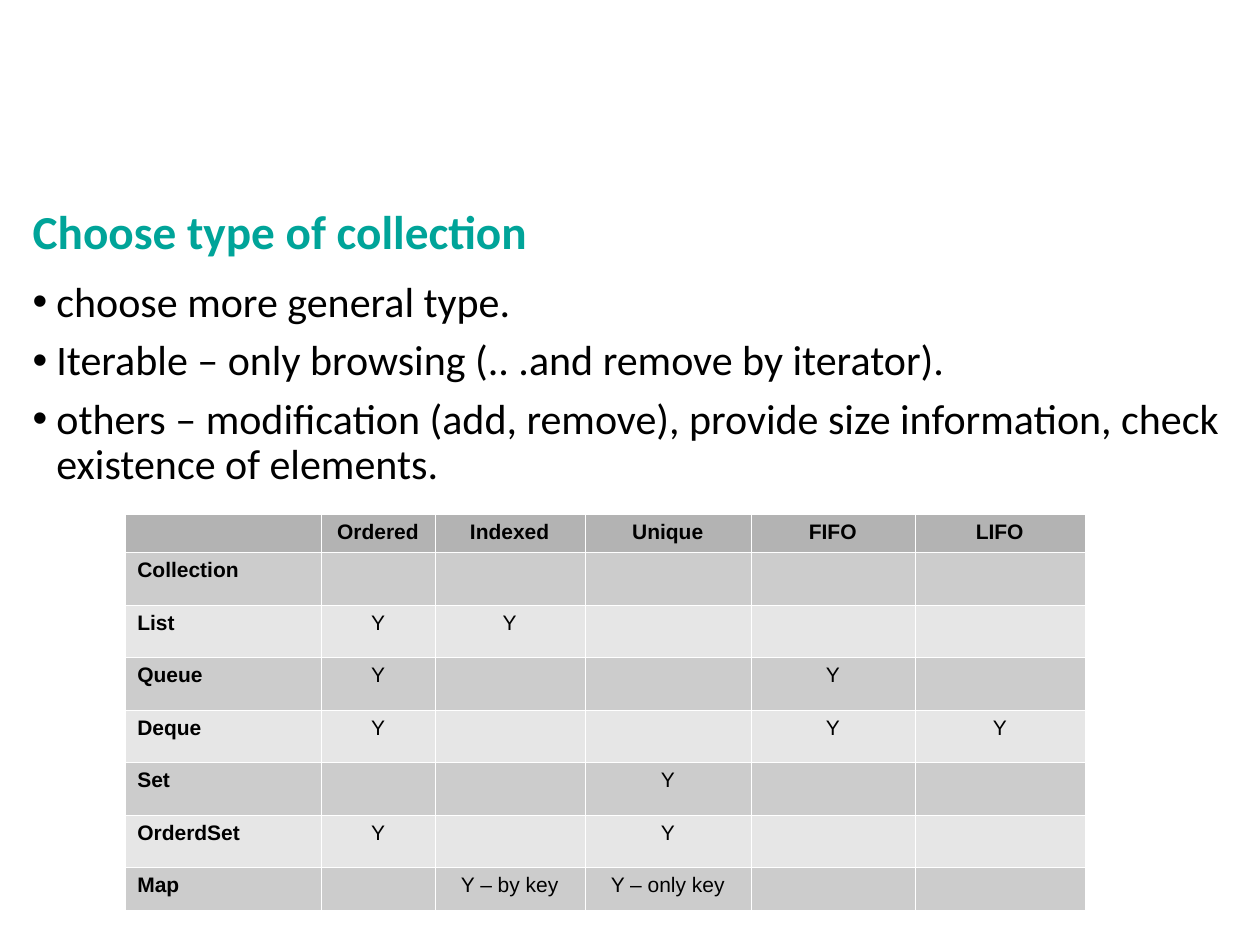
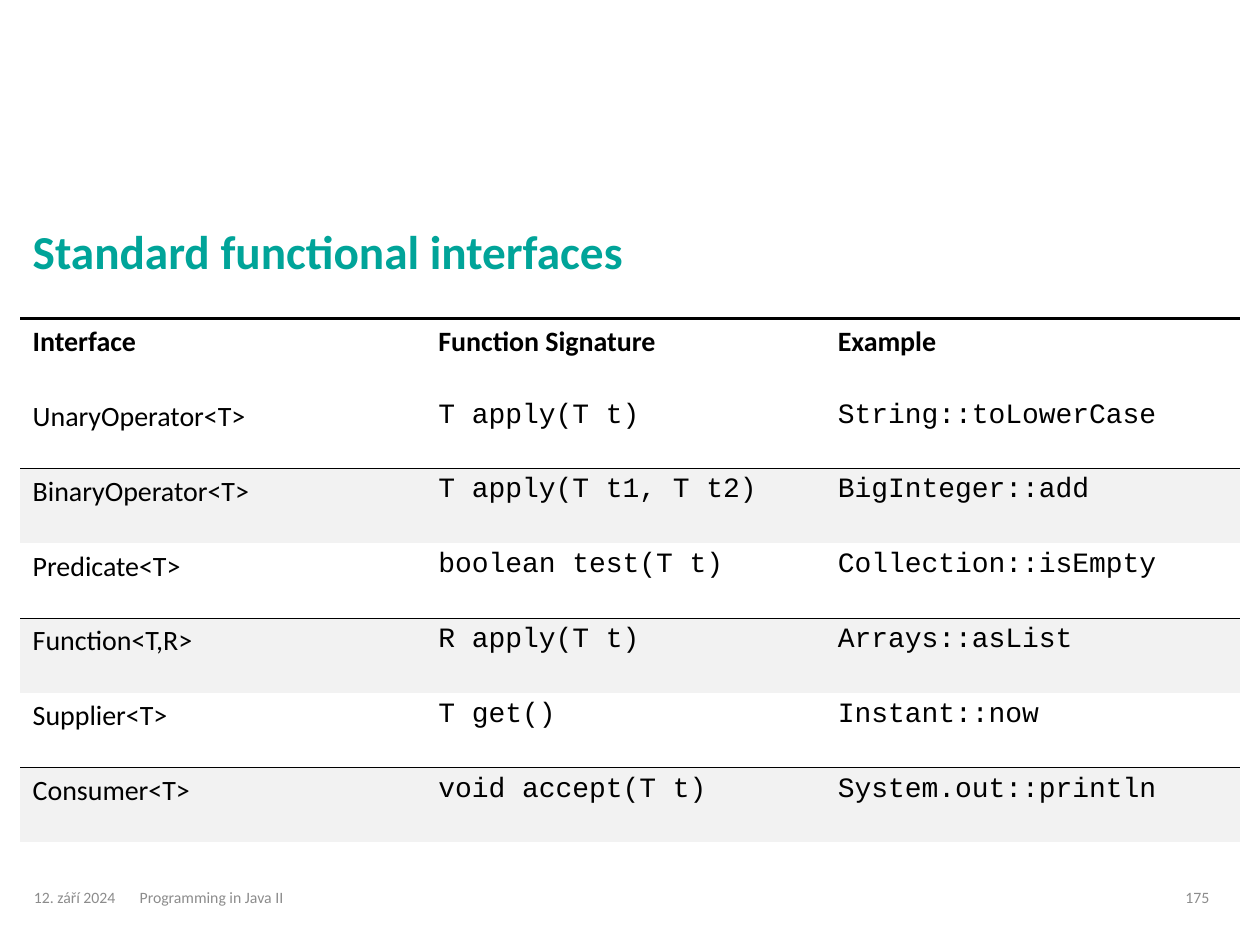
import dataclasses
import typing

import lxml.etree
import pptx
import pptx.dml.color
import pptx.enum.text
import pptx.oxml.ns
import pptx.util

GRID_COLUMNS = 100
GRID_ROWS = 75
SLIDE_WIDTH = pptx.util.Inches(10)
SLIDE_HEIGHT = pptx.util.Inches(7.5)
LEFT = pptx.enum.text.PP_ALIGN.LEFT
CENTER = pptx.enum.text.PP_ALIGN.CENTER


@dataclasses.dataclass(frozen=True)
class Theme:
    accent: str = "00A499"
    ink: str = "000000"
    paper: str = "FFFFFF"
    muted: str = "8C8C8C"
    header_gray: str = "B3B3B3"
    band_dark: str = "CCCCCC"
    band_light: str = "E6E6E6"
    band_pale: str = "F2F2F2"
    text_font: str = "Calibri"
    matrix_font: str = "Arial"
    code_font: str = "Courier New"
    title_size: float = 27
    body_size: float = 24
    interface_size: float = 16
    matrix_size: float = 12
    footer_size: float = 9


THEME = Theme()


@dataclasses.dataclass(frozen=True)
class Box:
    left: float
    top: float
    width: float
    height: float


@dataclasses.dataclass(frozen=True)
class TextStyle:
    size: float
    color: str = THEME.ink
    font: str = THEME.text_font
    bold: bool = False
    align: typing.Any = LEFT


@dataclasses.dataclass(frozen=True)
class Rule:
    color: str
    points: float


@dataclasses.dataclass(frozen=True)
class CellLook:
    text: TextStyle
    fill: typing.Optional[str] = None
    rules: typing.Mapping[str, Rule] = dataclasses.field(default_factory=dict)


@dataclasses.dataclass(frozen=True)
class Grid:
    left: float
    top: float
    columns: typing.Sequence[float]
    rows: typing.Sequence[float]
    content: typing.Sequence[typing.Sequence[str]]
    look: typing.Callable[[int, int], CellLook]


@dataclasses.dataclass(frozen=True)
class FooterPart:
    text: str
    left: float
    width: float


TITLE_STYLE = TextStyle(THEME.title_size, THEME.accent, bold=True)
BODY_STYLE = TextStyle(THEME.body_size)
FOOTER_STYLE = TextStyle(THEME.footer_size, THEME.muted)
HAIRLINE = Rule(THEME.paper, 0.06)
ROW_RULE = Rule(THEME.ink, 0.5)
TOP_RULE = Rule(THEME.ink, 2.21)

CHOICES = (
    "choose more general type.",
    "Iterable – only browsing (.. .and remove by iterator).",
    "others – modification (add, remove), provide size information, "
    "check existence of elements.",
)

COLLECTIONS = (
    ("", "Ordered", "Indexed", "Unique", "FIFO", "LIFO"),
    ("Collection", "", "", "", "", ""),
    ("List", "Y", "Y", "", "", ""),
    ("Queue", "Y", "", "", "Y", ""),
    ("Deque", "Y", "", "", "Y", "Y"),
    ("Set", "", "", "Y", "", ""),
    ("OrderdSet", "Y", "", "Y", "", ""),
    ("Map", "", "Y – by key", "Y – only key", "", ""),
)

INTERFACES = (
    ("Interface", "Function Signature", "Example"),
    ("UnaryOperator<T>", "T apply(T t)", "String::toLowerCase"),
    ("BinaryOperator<T>", "T apply(T t1, T t2)", "BigInteger::add"),
    ("Predicate<T>", "boolean test(T t)", "Collection::isEmpty"),
    ("Function<T,R>", "R apply(T t)", "Arrays::asList"),
    ("Supplier<T>", "T get()", "Instant::now"),
    ("Consumer<T>", "void accept(T t)", "System.out::println"),
)

FOOTER = (
    FooterPart("12. září 2024", 1.7, 8.5),
    FooterPart("Programming in Java II", 10.1, 81.5),
    FooterPart("175", 93.1, 5),
)


def across(columns: float) -> int:
    return round(SLIDE_WIDTH * columns / GRID_COLUMNS)


def down(rows: float) -> int:
    return round(SLIDE_HEIGHT * rows / GRID_ROWS)


def extent(box: Box) -> tuple[int, int, int, int]:
    return across(box.left), down(box.top), across(box.width), down(box.height)


def add_element(parent, tag: str, **attributes: str):
    return lxml.etree.SubElement(parent, pptx.oxml.ns.qn(tag), attributes)


def format_paragraph(paragraph, style: TextStyle) -> None:
    paragraph.alignment = style.align
    for run in paragraph.runs:
        run.font.size = pptx.util.Pt(style.size)
        run.font.name = style.font
        run.font.bold = style.bold
        run.font.color.rgb = pptx.dml.color.RGBColor.from_string(style.color)


def place(placeholder, box: Box, anchor) -> None:
    placeholder.left, placeholder.top, placeholder.width, placeholder.height = extent(box)
    frame = placeholder.text_frame
    frame.auto_size = pptx.enum.text.MSO_AUTO_SIZE.NONE
    frame.vertical_anchor = anchor
    frame.word_wrap = True


def set_title(slide, text: str, top: float) -> None:
    title = slide.shapes.title
    place(title, Box(1.6, top, 96.8, 11.2), pptx.enum.text.MSO_ANCHOR.BOTTOM)
    title.text_frame.text = text
    paragraph = title.text_frame.paragraphs[0]
    paragraph.line_spacing = 0.9
    format_paragraph(paragraph, TITLE_STYLE)


def set_bullets(placeholder, box: Box, items: typing.Sequence[str]) -> None:
    place(placeholder, box, pptx.enum.text.MSO_ANCHOR.TOP)
    frame = placeholder.text_frame
    frame.text = "\n".join(items)
    for index, paragraph in enumerate(frame.paragraphs):
        paragraph.line_spacing = 0.9
        paragraph.space_before = pptx.util.Pt(7.5 if index else 0)
        properties = paragraph._p.get_or_add_pPr()
        indent = across(1.88)
        properties.set("marL", str(indent))
        properties.set("indent", str(-indent))
        bullet_color = add_element(properties, "a:buClr")
        add_element(bullet_color, "a:srgbClr", val=THEME.ink)
        add_element(properties, "a:buFont", typeface="Arial")
        add_element(properties, "a:buChar", char="•")
        format_paragraph(paragraph, BODY_STYLE)


def add_footer(slide, parts: typing.Sequence[FooterPart]) -> None:
    for part in parts:
        box = Box(part.left, 69.5, part.width, 3.4)
        frame = slide.shapes.add_textbox(*extent(box)).text_frame
        frame.word_wrap = True
        frame.vertical_anchor = pptx.enum.text.MSO_ANCHOR.MIDDLE
        frame.text = part.text
        frame.paragraphs[0].space_after = pptx.util.Pt(6)
        format_paragraph(frame.paragraphs[0], FOOTER_STYLE)


def draw_rules(cell, rules: typing.Mapping[str, Rule]) -> None:
    properties = cell._tc.get_or_add_tcPr()
    for side in "LRTB":
        line = add_element(properties, f"a:ln{side}")
        rule = rules.get(side)
        if rule is None:
            add_element(line, "a:noFill")
        else:
            line.set("w", str(pptx.util.Pt(rule.points)))
            add_element(add_element(line, "a:solidFill"), "a:srgbClr", val=rule.color)


def fill_cell(cell, text: str, look: CellLook) -> None:
    draw_rules(cell, look.rules)
    if look.fill:
        cell.fill.solid()
        cell.fill.fore_color.rgb = pptx.dml.color.RGBColor.from_string(look.fill)
    else:
        cell.fill.background()
    cell.margin_left = cell.margin_right = across(1)
    cell.margin_top = cell.margin_bottom = down(0.5)
    cell.text_frame.text = text
    paragraph = cell.text_frame.paragraphs[0]
    format_paragraph(paragraph, look.text)
    if not text:
        paragraph._p.get_or_add_endParaRPr().set("sz", str(round(look.text.size * 100)))


def add_grid(slide, grid: Grid) -> None:
    box = Box(grid.left, grid.top, sum(grid.columns), sum(grid.rows))
    table = slide.shapes.add_table(len(grid.rows), len(grid.columns), *extent(box)).table
    table.first_row = False
    table.horz_banding = False
    for column, width in zip(table.columns, grid.columns):
        column.width = across(width)
    for row, height in zip(table.rows, grid.rows):
        row.height = down(height)
    for row_index, texts in enumerate(grid.content):
        for column_index, text in enumerate(texts):
            fill_cell(table.cell(row_index, column_index), text,
                      grid.look(row_index, column_index))


def collection_look(row: int, column: int) -> CellLook:
    bands = (THEME.band_light, THEME.band_dark)
    style = TextStyle(
        THEME.matrix_size,
        font=THEME.matrix_font,
        bold=row == 0 or column == 0,
        align=CENTER if column else LEFT,
    )
    fill = bands[row % 2] if row else THEME.header_gray
    return CellLook(style, fill, dict.fromkeys("LRTB", HAIRLINE))


def interface_look(row: int, column: int) -> CellLook:
    is_code = row > 0 and column > 0
    style = TextStyle(
        THEME.interface_size,
        font=THEME.code_font if is_code else THEME.text_font,
        bold=row == 0,
    )
    if row == 0:
        return CellLook(style, rules={"T": TOP_RULE})
    if row % 2:
        return CellLook(style, rules={"B": ROW_RULE})
    return CellLook(style, THEME.band_pale, {"T": ROW_RULE})


def build_collection_slide(deck) -> None:
    slide = deck.slides.add_slide(deck.slide_layouts[1])
    set_title(slide, "Choose type of collection", 9.9)
    set_bullets(slide.placeholders[1], Box(1.6, 21.8, 96.8, 43.5), CHOICES)
    add_grid(slide, Grid(
        9.9, 40.8,
        (15.6, 9, 11.9, 13.2, 13, 13.5),
        (3, *[4.17] * 6, 3.4),
        COLLECTIONS, collection_look,
    ))


def build_interface_slide(deck) -> None:
    slide = deck.slides.add_slide(deck.slide_layouts[5])
    set_title(slide, "Standard functional interfaces", 11.5)
    add_footer(slide, FOOTER)
    add_grid(slide, Grid(
        1.6, 25.3,
        (32.2, 31.7, 32.9),
        [5.94] * len(INTERFACES),
        INTERFACES, interface_look,
    ))


def main() -> None:
    deck = pptx.Presentation()
    deck.slide_width = SLIDE_WIDTH
    deck.slide_height = SLIDE_HEIGHT
    build_collection_slide(deck)
    build_interface_slide(deck)
    deck.save("out.pptx")


if __name__ == "__main__":
    main()
